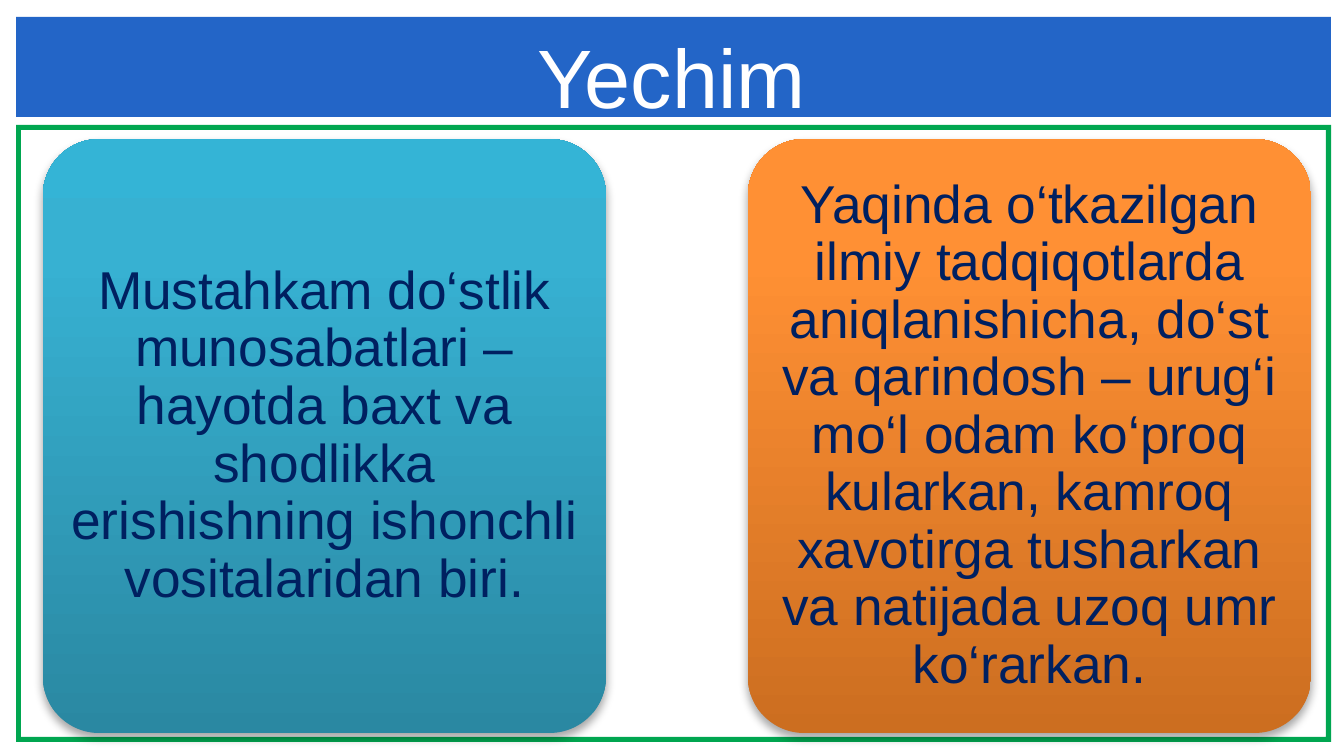
from copy import deepcopy

from lxml import etree
from pptx import Presentation
from pptx.dml.color import RGBColor
from pptx.enum.shapes import MSO_SHAPE
from pptx.enum.text import MSO_ANCHOR, PP_ALIGN
from pptx.oxml.ns import qn
from pptx.util import Emu, Pt

RECT, FRAME, ROUND = MSO_SHAPE.RECTANGLE, MSO_SHAPE.FRAME, MSO_SHAPE.ROUNDED_RECTANGLE
MIDDLE, BOTTOM, CENTER = MSO_ANCHOR.MIDDLE, MSO_ANCHOR.BOTTOM, PP_ALIGN.CENTER

# Content
TITLE = "Yechim"
CARDS = [
    ("Mustahkam do‘stlik munosabatlari – hayotda baxt va shodlikka "
     "erishishning ishonchli vositalaridan biri.",
     [(0, "2A88A2"), (0.8, "37B1D2"), (1, "34B4D6")]),
    ("Yaqinda o‘tkazilgan ilmiy tadqiqotlarda aniqlanishicha, do‘st va "
     "qarindosh – urug‘i mo‘l odam ko‘proq kularkan, kamroq xavotirga "
     "tusharkan va natijada uzoq umr ko‘rarkan.",
     [(0, "CC6E20"), (0.8, "FF9034"), (1, "FF9136")]),
]
TITLE_FONT = {"name": "Arial", "size": Pt(28)}
CARD_FONT = {"name": "Arial", "size": Pt(18)}

# Layout in px
SLIDE_W, SLIDE_H = 1344, 756
BANNER = (16, 17, 1315, 100)
TITLE_BOX = (70, 24, 1203, 101)
BORDER, BORDER_W = (16, 125, 1315, 617), 5
CARD_X, CARD_Y, CARD_W, CARD_H, CARD_GAP = 43, 139, 563, 594, 142
CARD_INSETS = (8, 7, 8, 7)


def px(n):
    return Emu(round(n * 914400 / 213))


def rgb(value):
    return RGBColor.from_string(value)


def add_shape(kind, box, color=None):
    sp = slide.shapes.add_shape(kind, *map(px, box))
    sp.shadow.inherit = False
    sp.line.fill.background()
    if color:
        sp.fill.solid()
        sp.fill.fore_color.rgb = rgb(color)
    return sp


def set_text(sp, text, font, color, anchor, insets=(0, 0, 0, 0)):
    tf = sp.text_frame
    tf.word_wrap = True
    tf.vertical_anchor = anchor
    for side, inset in zip(("left", "top", "right", "bottom"), insets):
        setattr(tf, f"margin_{side}", px(inset))
    p = tf.paragraphs[0]
    p.alignment = CENTER
    r = p.add_run()
    r.text = text
    for key, value in font.items():
        setattr(r.font, key, value)
    r.font.color.rgb = rgb(color)
    return p


def set_gradient(sp, stops):
    sp.fill.gradient()
    sp.fill.gradient_angle = 90
    gs_list = sp._element.spPr.find(qn("a:gradFill")).find(qn("a:gsLst"))
    while len(gs_list) < len(stops):
        gs_list.append(deepcopy(gs_list[0]))
    for stop, (position, color) in zip(sp.fill.gradient_stops, stops):
        stop.position = position
        stop.color.rgb = rgb(color)


def add_shadow(sp):
    effects = sp._element.spPr.find(qn("a:effectLst"))
    shadow = etree.SubElement(effects, qn("a:outerShdw"), blurRad=str(Pt(3.1)),
                              dist=str(Pt(1.8)), dir="5400000", rotWithShape="0")
    color = etree.SubElement(shadow, qn("a:srgbClr"), val="000000")
    etree.SubElement(color, qn("a:alpha"), val="35000")


prs = Presentation()
prs.slide_width, prs.slide_height = px(SLIDE_W), px(SLIDE_H)
slide = prs.slides.add_slide(prs.slide_layouts[6])

# Green border and blue banner
border = add_shape(FRAME, BORDER, "00A650")
border.adjustments[0] = BORDER_W / BORDER[3]
add_shape(RECT, BANNER, "2365C7")

# Title
title = slide.shapes.add_textbox(*map(px, TITLE_BOX))
set_text(title, TITLE, TITLE_FONT, "FFFFFF", BOTTOM)

# Cards
for i, (text, stops) in enumerate(CARDS):
    x = CARD_X + i * (CARD_W + CARD_GAP)
    card = add_shape(ROUND, (x, CARD_Y, CARD_W, CARD_H))
    card.adjustments[0] = 0.1
    set_gradient(card, stops)
    add_shadow(card)
    p = set_text(card, text, CARD_FONT, "002060", MIDDLE, CARD_INSETS)
    p.line_spacing = 0.9

prs.save("out.pptx")
